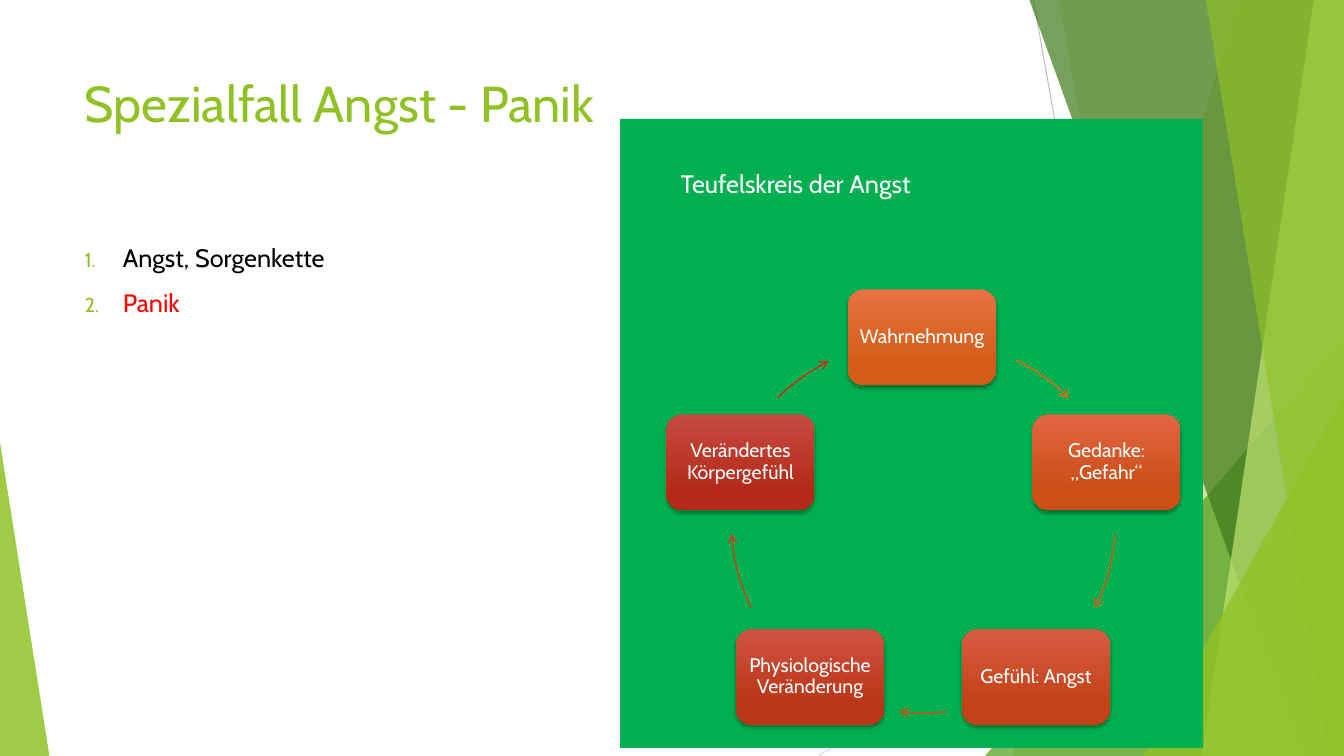
from lxml import etree
from pptx import Presentation
from pptx.dml.color import RGBColor
from pptx.enum.shapes import MSO_CONNECTOR, MSO_SHAPE
from pptx.enum.text import MSO_ANCHOR, PP_ALIGN
from pptx.oxml.ns import qn
from pptx.util import Inches, Pt

STRAIGHT = MSO_CONNECTOR.STRAIGHT
RECT, ROUNDED = MSO_SHAPE.RECTANGLE, MSO_SHAPE.ROUNDED_RECTANGLE
TRIANGLE = MSO_SHAPE.ISOSCELES_TRIANGLE
TOP, MIDDLE = MSO_ANCHOR.TOP, MSO_ANCHOR.MIDDLE
LEFT, CENTER = PP_ALIGN.LEFT, PP_ALIGN.CENTER

W, H = 13.33, 7.5
FONT, GREEN, WHITE = "Cabin", "90C226", "FFFFFF"
NODE_W, NODE_H = 1.47, 0.95

# Facets at the right edge: top x, bottom x, colour, opacity in percent
BANDS_BACK = [(12.28, 10.04, GREEN, 30), (10.5, 11.83, GREEN, 20)]
BANDS_FRONT = [(10.21, 12.91, "3F7819", 70), (13.03, 11.92, "C0E474", 70),
               (11.96, 13.18, GREEN, 65)]

# Cycle nodes: text, left, top, gradient colours
NODES = [
    ("Wahrnehmung", 8.41, 2.87, "E87242", "D35D16"),
    ("Gedanke: „Gefahr“", 10.24, 4.11, "E06542", "CB4F17"),
    ("Gefühl: Angst", 9.54, 6.24, "D75B42", "C34217"),
    ("Physiologische Veränderung", 7.3, 6.24, "CF5242", "BB3617"),
    ("Verändertes Körpergefühl", 6.61, 4.11, "C74B42", "B32B18"),
]
# Cycle arrows: four Bézier points, colour
ARROWS = [
    ([(10.08, 3.57), (10.27, 3.67), (10.45, 3.79), (10.6, 3.95)], "E76618"),
    ([(11.06, 5.3), (11.04, 5.56), (10.98, 5.8), (10.86, 6.03)], "DE5719"),
    ([(9.39, 7.06), (9.24, 7.08), (9.08, 7.08), (8.92, 7.06)], "D54819"),
    ([(7.45, 6.03), (7.34, 5.8), (7.27, 5.56), (7.26, 5.3)], "CD3B1A"),
    ([(7.71, 3.95), (7.86, 3.8), (8.04, 3.68), (8.22, 3.58)], "C42F1A"),
]


def rgb(color):
    return RGBColor.from_string(color)


def sub(parent, tag, **attrs):
    return etree.SubElement(parent, qn(tag), {k: str(v) for k, v in attrs.items()})


def fill_plain(sp, color, opacity=100):
    sp.shadow.inherit = False
    sp.line.fill.background()
    sp.fill.solid()
    sp.fill.fore_color.rgb = rgb(color)
    if opacity < 100:
        clr = sp.fill._xPr.find(qn("a:solidFill"))[0]
        sub(clr, "a:alpha", val=opacity * 1000)


def add_shape(s, kind, x, y, w, h):
    return s.shapes.add_shape(kind, Inches(x), Inches(y), Inches(w), Inches(h))


def add_path(s, points, close):
    pts = [(Inches(x), Inches(y)) for x, y in points]
    fb = s.shapes.build_freeform(*pts[0])
    fb.add_line_segments(pts[1:], close=close)
    sp = fb.convert_to_shape()
    sp.shadow.inherit = False
    return sp


def add_band(s, top_x, bottom_x, color, opacity):
    sp = add_path(s, [(top_x, 0), (W, 0), (W, H), (bottom_x, H)], True)
    fill_plain(sp, color, opacity)


def add_triangle(s, x, y, w, adj, color, opacity):
    sp = add_shape(s, TRIANGLE, x, y, w, H - y)
    sp.adjustments[0] = adj
    fill_plain(sp, color, opacity)


def add_thin_line(s, x1, y1, x2, y2, color):
    c = s.shapes.add_connector(STRAIGHT, Inches(x1), Inches(y1), Inches(x2), Inches(y2))
    c.line.color.rgb = rgb(color)
    c.line.width = Pt(0.75)
    sub(c._element.spPr, "a:effectLst")


def set_frame(sp, anchor=TOP, margins=(0.1, 0.05, 0.1, 0.05)):
    tf = sp.text_frame
    tf.word_wrap = True
    tf.vertical_anchor = anchor
    (tf.margin_left, tf.margin_top,
     tf.margin_right, tf.margin_bottom) = [Inches(m) for m in margins]
    return tf


def write(p, text, size, color, align=LEFT):
    p.alignment = align
    r = p.add_run()
    r.text = text
    r.font.size = Pt(size)
    r.font.name = FONT
    r.font.color.rgb = rgb(color)


def add_textbox(s, x, y, w, h):
    return set_frame(s.shapes.add_textbox(Inches(x), Inches(y), Inches(w), Inches(h)))


def number(p):
    p.space_before = Pt(10)
    pPr = p._p.get_or_add_pPr()
    pPr.set("marL", str(Inches(0.38)))
    pPr.set("indent", str(-Inches(0.38)))
    sub(sub(pPr, "a:buClr"), "a:srgbClr", val=GREEN)
    sub(pPr, "a:buSzPct", val=80000)
    sub(pPr, "a:buFont", typeface=FONT)
    sub(pPr, "a:buAutoNum", type="arabicPeriod")


def add_node(s, text, x, y, light, dark):
    sp = add_shape(s, ROUNDED, x, y, NODE_W, NODE_H)
    sp.line.fill.background()
    sp.fill.gradient()
    sp.fill.gradient_angle = 270
    for stop, color, pos in zip(sp.fill.gradient_stops, (light, dark), (0, 0.78)):
        stop.color.rgb = rgb(color)
        stop.position = pos
    # Soft shadow below
    sp.shadow.inherit = False
    effects = sp._element.spPr.find(qn("a:effectLst"))
    shadow = sub(effects, "a:outerShdw", blurRad=Pt(3), dist=Pt(2), dir=5400000,
                 rotWithShape=0)
    sub(sub(shadow, "a:srgbClr", val="000000"), "a:alpha", val=35000)
    # The rounded corners already inset the text, so the margins stay small
    p = set_frame(sp, MIDDLE, (0.04,) * 4).paragraphs[0]
    p.line_spacing = 0.9
    write(p, text, 14, WHITE, CENTER)


def bezier(points, steps=16):
    def at(t):
        weights = ((1 - t) ** 3, 3 * t * (1 - t) ** 2, 3 * t * t * (1 - t), t ** 3)
        return tuple(sum(k * pt[i] for k, pt in zip(weights, points)) for i in (0, 1))
    return [at(n / steps) for n in range(steps + 1)]


def add_arc_arrow(s, points, color):
    sp = add_path(s, bezier(points), False)
    sp.fill.background()
    sp.line.color.rgb = rgb(color)
    sp.line.width = Pt(1)
    sub(sp.line._get_or_add_ln(), "a:tailEnd", type="arrow")


def main():
    prs = Presentation()
    prs.slide_width, prs.slide_height = Inches(W), Inches(H)
    s = prs.slides.add_slide(prs.slide_layouts[6])

    # Background facets
    add_thin_line(s, 10.25, 0, 11.58, H, "BFBFBF")
    add_thin_line(s, W, 4.03, 8.12, H, "D9D9D9")
    for band in BANDS_BACK:
        add_band(s, *band)
    add_triangle(s, 9.77, 3.33, 3.56, 1, "54A021", 72)
    for band in BANDS_FRONT:
        add_band(s, *band)
    add_triangle(s, 11.34, 3.93, 1.99, 1, GREEN, 80)
    add_triangle(s, 0, 4.39, 0.49, 0, GREEN, 85)

    # Title and numbered list
    tf = add_textbox(s, 0.74, 0.67, 9.4, 1.44)
    write(tf.paragraphs[0], "Spezialfall Angst - Panik", 36, GREEN)
    tf = add_textbox(s, 0.74, 2.36, 9.4, 4.24)
    items = [("Angst, Sorgenkette", "000000"), ("Panik", "FF0000")]
    for i, (text, color) in enumerate(items):
        p = tf.add_paragraph() if i else tf.paragraphs[0]
        number(p)
        write(p, text, 18, color)

    # Green panel with heading
    panel = add_shape(s, RECT, 6.15, 1.18, 5.78, 6.24)
    fill_plain(panel, "00B050")
    tf = set_frame(panel, TOP, (0.6, 0.49, 0.1, 0.05))
    write(tf.paragraphs[0], "Teufelskreis der Angst", 18, WHITE)

    # Vicious circle
    for node, arrow in zip(NODES, ARROWS):
        add_node(s, *node)
        add_arc_arrow(s, *arrow)

    prs.save("out.pptx")


if __name__ == "__main__":
    main()
